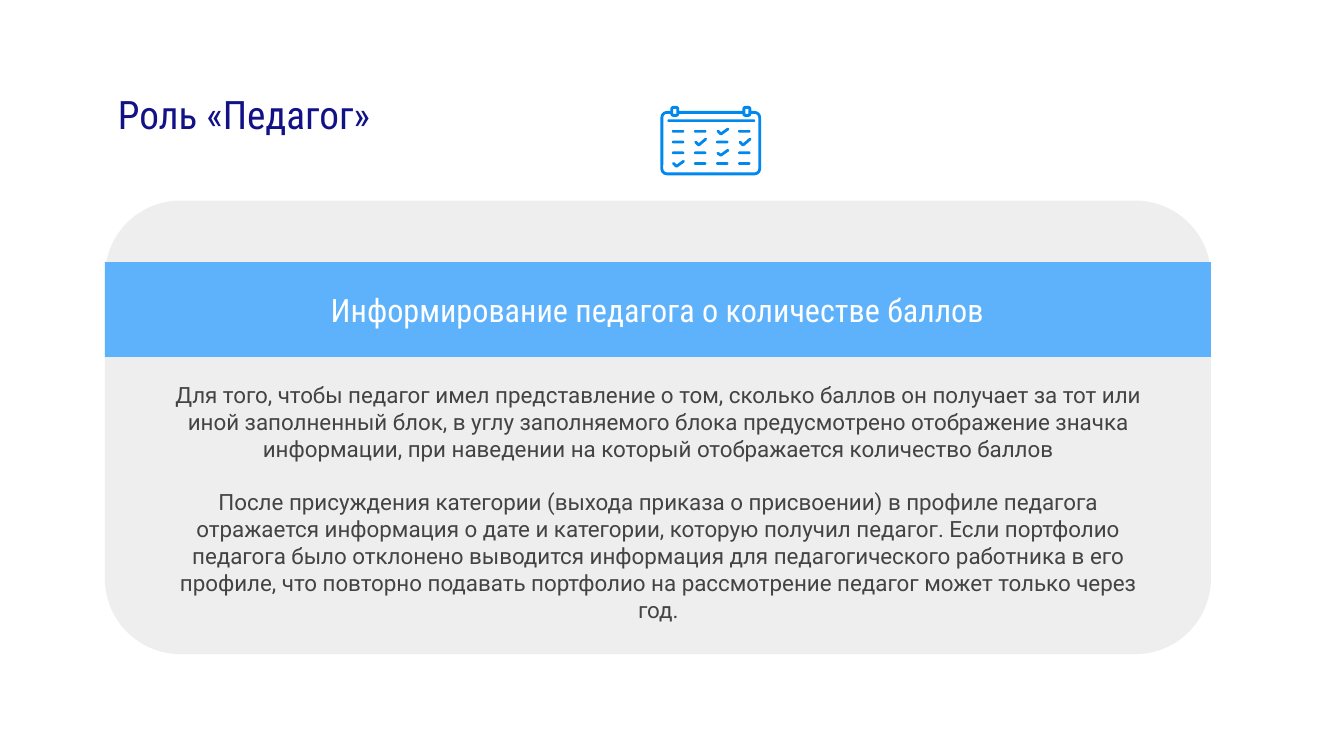
import pptx
import pptx.util
import pptx.dml.color
import pptx.enum.shapes
import pptx.enum.text
import pptx.oxml.ns
import lxml.etree

# The slide is a grid of square cells, 100 to the inch
COLUMNS, ROWS = 1333, 750
CELL = pptx.util.Inches(0.01)

COLORS = {"title": "121286", "card": "EEEEEE", "band": "5EB2FC", "band_text": "FFFFFF",
          "body": "434343", "icon": "0088EE", "paper": "FFFFFF"}
SHAPES = pptx.enum.shapes.MSO_SHAPE
ALIGN = pptx.enum.text.PP_ALIGN
ANCHOR = pptx.enum.text.MSO_ANCHOR

TITLE = "Роль «Педагог»"
BAND = "Информирование педагога о количестве баллов"
BODY = [
    "Для того, чтобы педагог имел представление о том, сколько баллов он получает за тот или "
    "иной заполненный блок, в углу заполняемого блока предусмотрено отображение значка "
    "информации, при наведении на который отображается количество баллов",
    "После присуждения категории (выхода приказа о присвоении) в профиле педагога отражается "
    "информация о дате и категории, которую получил педагог. Если портфолио педагога было "
    "отклонено выводится информация для педагогического работника в его профиле, что повторно "
    "подавать портфолио на рассмотрение педагог может только через год.",
]
CALENDAR = ["--v-", "-v-v", "--v-", "v---"]  # v is a tick, - is a dash


def color(name):
    return pptx.dml.color.RGBColor.from_string(COLORS[name])


def cells(*lengths):
    return [round(length * CELL) for length in lengths]


def paint(shape, fill=None, line=None):
    shape.shadow.inherit = False
    if fill:
        shape.fill.solid()
        shape.fill.fore_color.rgb = color(fill)
    else:
        shape.fill.background()
    if line:
        shape.line.color.rgb = color(line)
        shape.line.width = pptx.util.Pt(2)
    else:
        shape.line.fill.background()


def add_block(parent, kind, box, fill=None, line=None, rounding=None):
    shape = parent.shapes.add_shape(kind, *cells(*box))
    paint(shape, fill, line)
    if rounding is not None:
        shape.adjustments[0] = rounding
    return shape


def write(shape, texts, font, size, ink, align, anchor, inset=10, gap=0):
    frame = shape.text_frame
    frame.word_wrap = True
    frame.vertical_anchor = anchor
    frame.margin_left = frame.margin_right = frame.margin_top = frame.margin_bottom = cells(inset)[0]
    for index, text in enumerate(texts):
        para = frame.add_paragraph() if index else frame.paragraphs[0]
        para.alignment = align
        para.space_before = pptx.util.Pt(gap if index else 0)
        span = para.add_run()
        span.text = text
        span.font.name = font
        span.font.size = pptx.util.Pt(size)
        span.font.color.rgb = color(ink)


def add_title(slide, box):
    holder = slide.shapes.add_textbox(*cells(*box))
    write(holder, [TITLE], "Roboto Condensed", 28, "title", ALIGN.LEFT, ANCHOR.MIDDLE, inset=13)


def add_card(slide, box):
    left, top, width, height = box
    group = slide.shapes.add_group_shape()
    add_block(group, SHAPES.ROUNDED_RECTANGLE, box, "card", rounding=0.167)
    # Heading band across the card
    band = add_block(group, SHAPES.RECTANGLE, (left, top + 61, width, 94), "band")
    write(band, [BAND], "Roboto Condensed", 23, "band_text", ALIGN.CENTER, ANCHOR.MIDDLE)
    # Explanation below the band
    body = group.shapes.add_textbox(*cells(left + 49, top + 169, 1000, height - 181))
    write(body, BODY, "Roboto", 16, "body", ALIGN.CENTER, ANCHOR.TOP, gap=19)


def add_tick(group, left, top):
    points = [(left + x, top + y) for x, y in [(1.5, 4), (5, 6.7), (11.5, 1.3)]]
    builder = group.shapes.build_freeform(*points[0], scale=CELL)
    builder.add_line_segments(points[1:], close=False)
    tick = builder.convert_to_shape()
    paint(tick, line="icon")
    outline = tick.line._get_or_add_ln()
    outline.set("cap", "rnd")
    lxml.etree.SubElement(outline, pptx.oxml.ns.qn("a:round"))


def add_calendar(slide, box):
    left, top, width, height = box
    group = slide.shapes.add_group_shape()
    # Sheet with two rings and a header rule
    add_block(group, SHAPES.ROUNDED_RECTANGLE, (left + 1.5, top + 6.5, width - 3, height - 8),
              line="icon", rounding=0.08)
    for ring_left in (left + 11.3, left + width - 17.2):
        add_block(group, SHAPES.ROUNDED_RECTANGLE, (ring_left, top + 1.5, 6, 8),
                  "paper", "icon", rounding=0.25)
    add_block(group, SHAPES.ROUNDED_RECTANGLE, (left + 7, top + 13.3, width - 13, 2.7),
              "icon", rounding=0.5)
    # Grid of days
    for row, days in enumerate(CALENDAR):
        for column, day in enumerate(days):
            x = left + 11.4 + 21.9 * column
            y = top + 24 + 10.65 * row
            if day == "v":
                add_tick(group, x, y - 2.7)
            else:
                add_block(group, SHAPES.ROUNDED_RECTANGLE, (x, y, 12.3, 2.6), "icon", rounding=0.5)


def main():
    deck = pptx.Presentation()
    deck.slide_width, deck.slide_height = cells(COLUMNS, ROWS)
    slide = deck.slides.add_slide(deck.slide_layouts[6])
    add_title(slide, (104, 78, 1126, 70))
    add_card(slide, (104, 199, 1097, 450))
    add_calendar(slide, (655, 105, 100, 69))
    deck.save("out.pptx")


if __name__ == "__main__":
    main()
